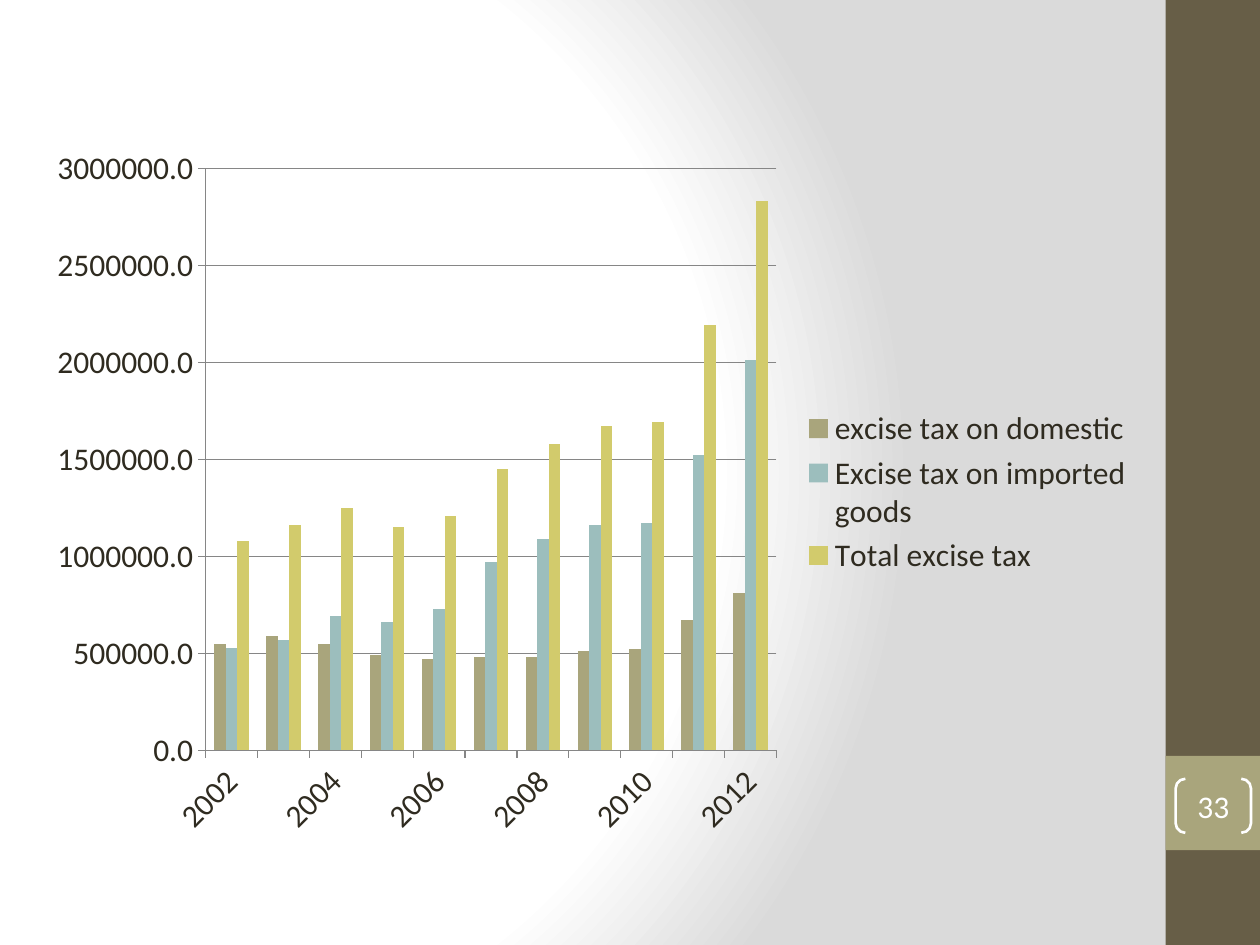
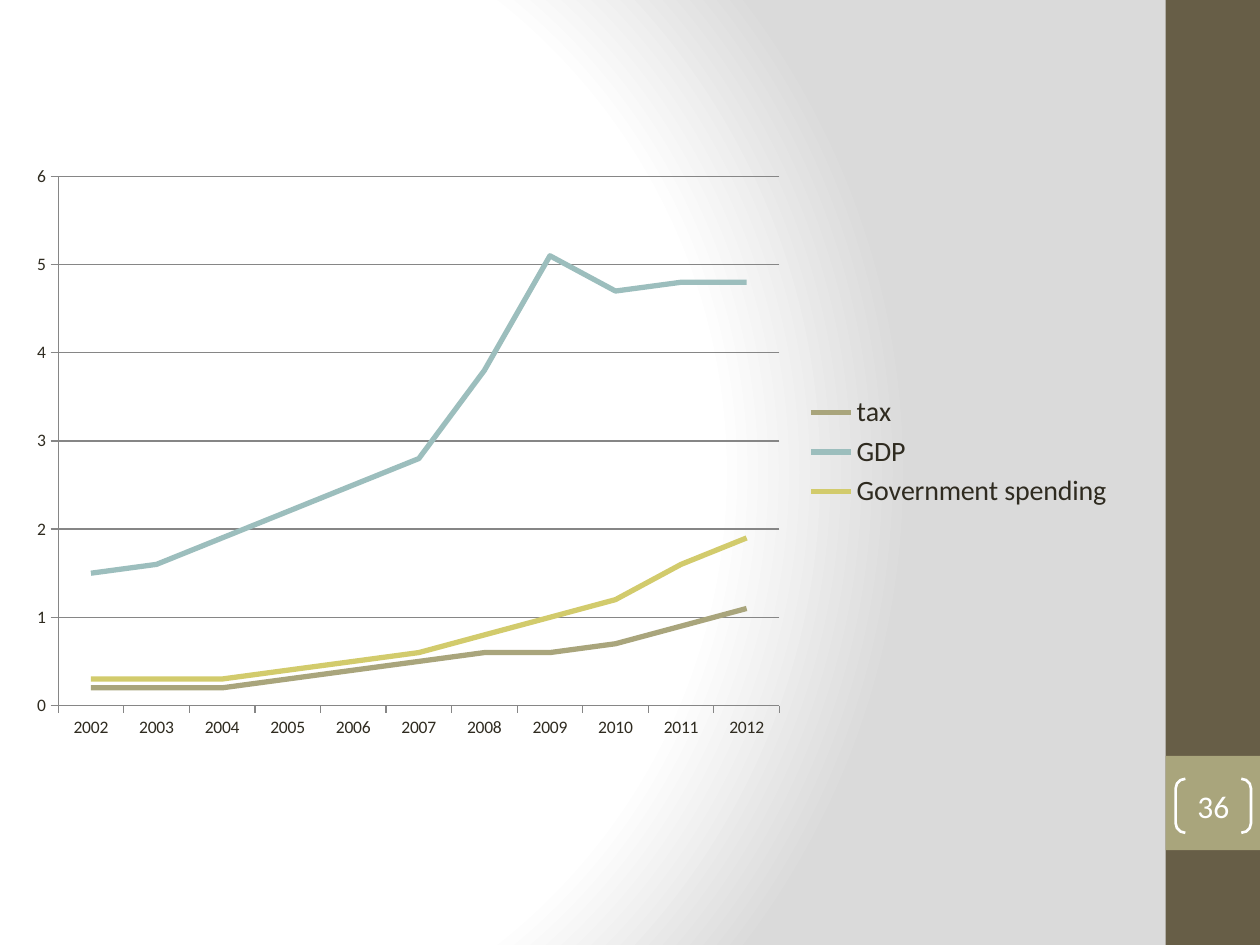
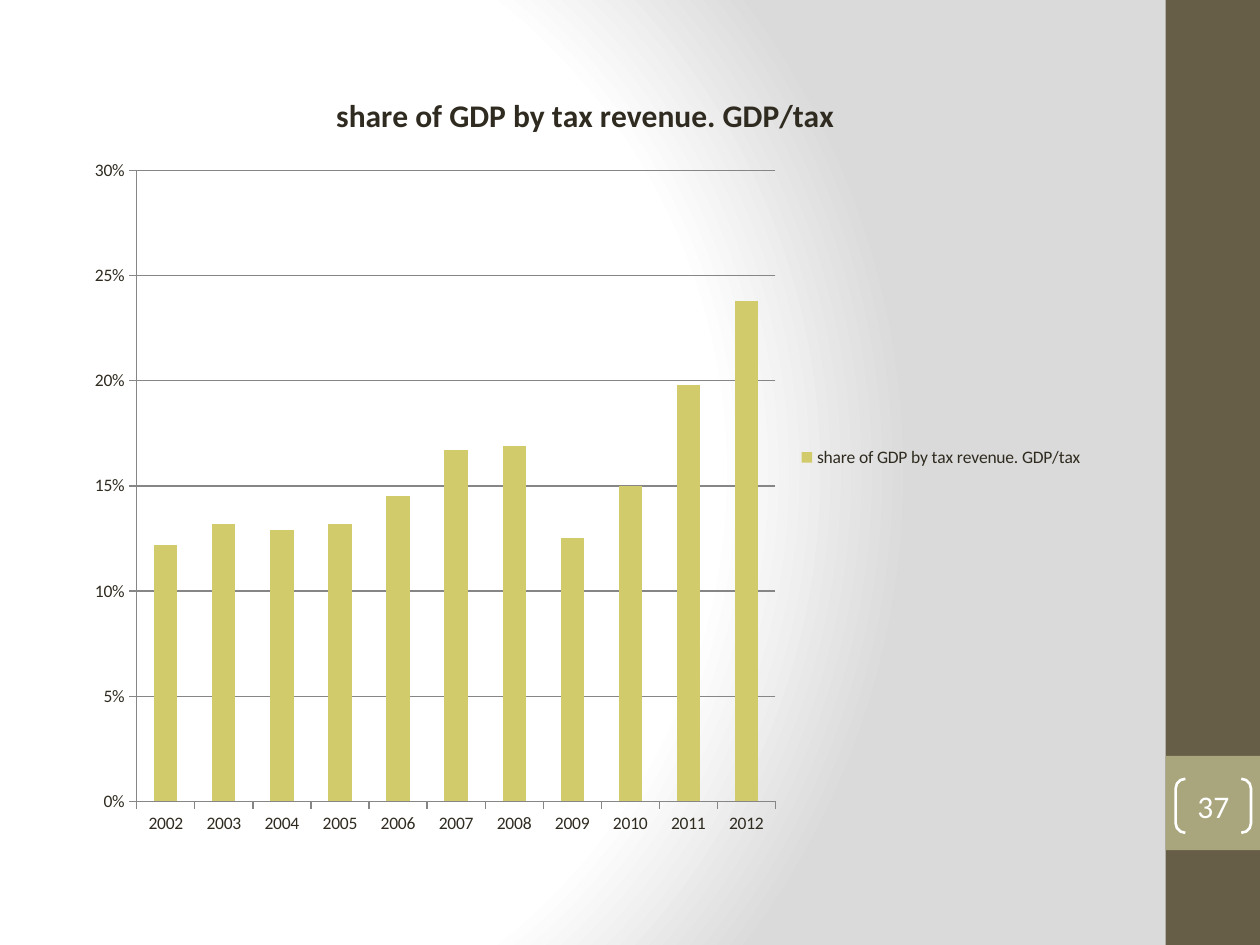
from dataclasses import dataclass

from lxml import etree
from pptx import Presentation
from pptx.chart.data import CategoryChartData
from pptx.dml.color import RGBColor
from pptx.enum.chart import XL_CHART_TYPE, XL_LEGEND_POSITION, XL_TICK_MARK
from pptx.enum.shapes import MSO_SHAPE
from pptx.enum.text import MSO_ANCHOR, PP_ALIGN
from pptx.oxml import parse_xml
from pptx.oxml.ns import nsdecls, qn
from pptx.util import Cm, Pt

COLUMNS = XL_CHART_TYPE.COLUMN_CLUSTERED
LINES = XL_CHART_TYPE.LINE
RIGHT = XL_LEGEND_POSITION.RIGHT
TICK_OUT, TICK_NONE = XL_TICK_MARK.OUTSIDE, XL_TICK_MARK.NONE
RECT, BRACKETS = MSO_SHAPE.RECTANGLE, MSO_SHAPE.DOUBLE_BRACKET
MIDDLE, CENTER = MSO_ANCHOR.MIDDLE, PP_ALIGN.CENTER


@dataclass(frozen=True)
class Theme:
    font: str = "Calibri"
    ink: str = "2F2B20"
    band: str = "675E47"
    olive: str = "A9A57C"
    teal: str = "9CBEBD"
    yellow: str = "D2CB6C"
    white: str = "FFFFFF"
    shade: str = "DADADA"
    grid: str = "868686"
    large: int = 18
    medium: int = 16
    small: int = 10
    rule: float = 0.75
    bracket: float = 1.5
    curve: float = 3


THEME = Theme()
YEARS = [str(year) for year in range(2002, 2013)]
SHARE = "share of GDP by tax revenue. GDP/tax"

# Series: name, values, colour
EXCISE = [
    ("excise tax on domestic",
     [550000, 590000, 550000, 490000, 470000, 480000, 480000, 510000,
      520000, 670000, 810000], THEME.olive),
    ("Excise tax on imported goods",
     [530000, 570000, 690000, 660000, 730000, 970000, 1090000, 1160000,
      1170000, 1520000, 2010000], THEME.teal),
    ("Total excise tax",
     [1080000, 1160000, 1250000, 1150000, 1210000, 1450000, 1580000, 1670000,
      1690000, 2190000, 2830000], THEME.yellow),
]
ECONOMY = [
    ("tax", [0.2, 0.2, 0.2, 0.3, 0.4, 0.5, 0.6, 0.6, 0.7, 0.9, 1.1], THEME.olive),
    ("GDP", [1.5, 1.6, 1.9, 2.2, 2.5, 2.8, 3.8, 5.1, 4.7, 4.8, 4.8], THEME.teal),
    ("Government spending",
     [0.3, 0.3, 0.3, 0.4, 0.5, 0.6, 0.8, 1, 1.2, 1.6, 1.9], THEME.yellow),
]
TAX_SHARE = [
    (SHARE, [0.122, 0.132, 0.129, 0.132, 0.145, 0.167, 0.169, 0.125, 0.15,
             0.198, 0.238], THEME.yellow),
]


def rgb(color):
    return RGBColor.from_string(color)


def set_font(font, size, color, bold=False):
    font.name, font.size, font.bold = THEME.font, Pt(size), bold
    font.color.rgb = rgb(color)


def set_line(line, color, width):
    line.color.rgb = rgb(color)
    line.width = Pt(width)


def set_background(master):
    """White glow from the left that fades to grey."""
    master.background.fill.solid()
    bg = master.element.find(".//" + qn("p:bgPr"))
    grad = parse_xml(f'<a:gradFill {nsdecls("a")} rotWithShape="1"><a:gsLst/></a:gradFill>')
    for pos, color in ((0, THEME.white), (75, THEME.white), (100, THEME.shade)):
        stop = etree.SubElement(grad[0], qn("a:gs"), pos=str(pos * 1000))
        etree.SubElement(stop, qn("a:srgbClr"), val=color)
    path = etree.SubElement(grad, qn("a:path"))
    path.set("path", "circle")
    etree.SubElement(path, qn("a:fillToRect"),
                     l="20000", t="50000", r="100000", b="50000")
    bg.replace(bg.find(qn("a:solidFill")), grad)


def add_band(s, top, height, color):
    sp = s.shapes.add_shape(RECT, Cm(23.5), Cm(top), Cm(1.9), Cm(height))
    sp.shadow.inherit = False
    sp.fill.solid()
    sp.fill.fore_color.rgb = rgb(color)
    sp.line.fill.background()
    return sp


def set_master_bands(master, s):
    """Draw the side bands and move them to the master, behind its other parts."""
    bands = [add_band(s, 0, 19.05, THEME.band), add_band(s, 15.24, 1.9, THEME.olive)]
    for index, sp in enumerate(bands, start=2):
        master.shapes.element.insert(index, sp.element)


def add_page_number(s, number):
    sp = s.shapes.add_shape(BRACKETS, Cm(23.7), Cm(15.7), Cm(1.52), Cm(1.09))
    sp.adjustments[0] = 0.18
    sp.shadow.inherit = False
    sp.fill.background()
    set_line(sp.line, THEME.white, THEME.bracket)
    tf = sp.text_frame
    tf.margin_left = tf.margin_right = tf.margin_top = tf.margin_bottom = 0
    tf.vertical_anchor = MIDDLE
    tf.text = str(number)
    p = tf.paragraphs[0]
    p.alignment = CENTER
    set_font(p.runs[0].font, THEME.large, THEME.white)


def format_axes(chart, top, step, number_format):
    for axis in (chart.category_axis, chart.value_axis):
        axis.major_tick_mark, axis.minor_tick_mark = TICK_OUT, TICK_NONE
        set_line(axis.format.line, THEME.grid, THEME.rule)
    values = chart.value_axis
    values.minimum_scale, values.maximum_scale, values.major_unit = 0, top, step
    values.has_major_gridlines = True
    set_line(values.major_gridlines.format.line, THEME.grid, THEME.rule)
    values.tick_labels.number_format = number_format
    values.tick_labels.number_format_is_linked = False


def add_chart(s, kind, box, series, scale, size, legend_size, title=None):
    data = CategoryChartData()
    data.categories = YEARS
    for name, values, _ in series:
        data.add_series(name, values)
    chart = s.shapes.add_chart(kind, *map(Cm, box), data).chart
    set_font(chart.font, size, THEME.ink)
    format_axes(chart, *scale)

    # Legend and title
    chart.has_legend = True
    chart.legend.position = RIGHT
    chart.legend.include_in_layout = False
    set_font(chart.legend.font, legend_size, THEME.ink)
    chart.has_title = title is not None
    if title:
        tf = chart.chart_title.text_frame
        tf.text = title
        set_font(tf.paragraphs[0].runs[0].font, THEME.large, THEME.ink, bold=True)

    # Series
    plot = chart.plots[0]
    plot.vary_by_categories = False
    if kind == COLUMNS:
        plot.gap_width = 150
    for ser, (_, _, color) in zip(plot.series, series):
        if kind == LINES:
            ser.smooth = False
            set_line(ser.format.line, color, THEME.curve)
        else:
            ser.format.fill.solid()
            ser.format.fill.fore_color.rgb = rgb(color)


def add_slide(prs, number):
    s = prs.slides.add_slide(prs.slide_layouts.get_by_name("Blank"))
    add_page_number(s, number)
    return s


def main():
    prs = Presentation()
    prs.slide_width, prs.slide_height = Cm(25.4), Cm(19.05)
    set_background(prs.slide_master)

    # Excise tax
    s = add_slide(prs, 33)
    set_master_bands(prs.slide_master, s)
    add_chart(s, COLUMNS, (0.71, 2.72, 22.4, 14.4), EXCISE,
              (3000000, 500000, "0.0"), THEME.large, THEME.large)

    # Tax, GDP and spending
    s = add_slide(prs, 36)
    add_chart(s, LINES, (0.3, 3.12, 22.4, 11.99), ECONOMY,
              (6, 1, "General"), THEME.small, THEME.medium)

    # Tax share of GDP
    s = add_slide(prs, 37)
    add_chart(s, COLUMNS, (1.5, 1.32, 20.6, 15.8), TAX_SHARE,
              (0.3, 0.05, "0%"), THEME.small, THEME.small, title=SHARE)

    prs.save("out.pptx")


if __name__ == "__main__":
    main()
